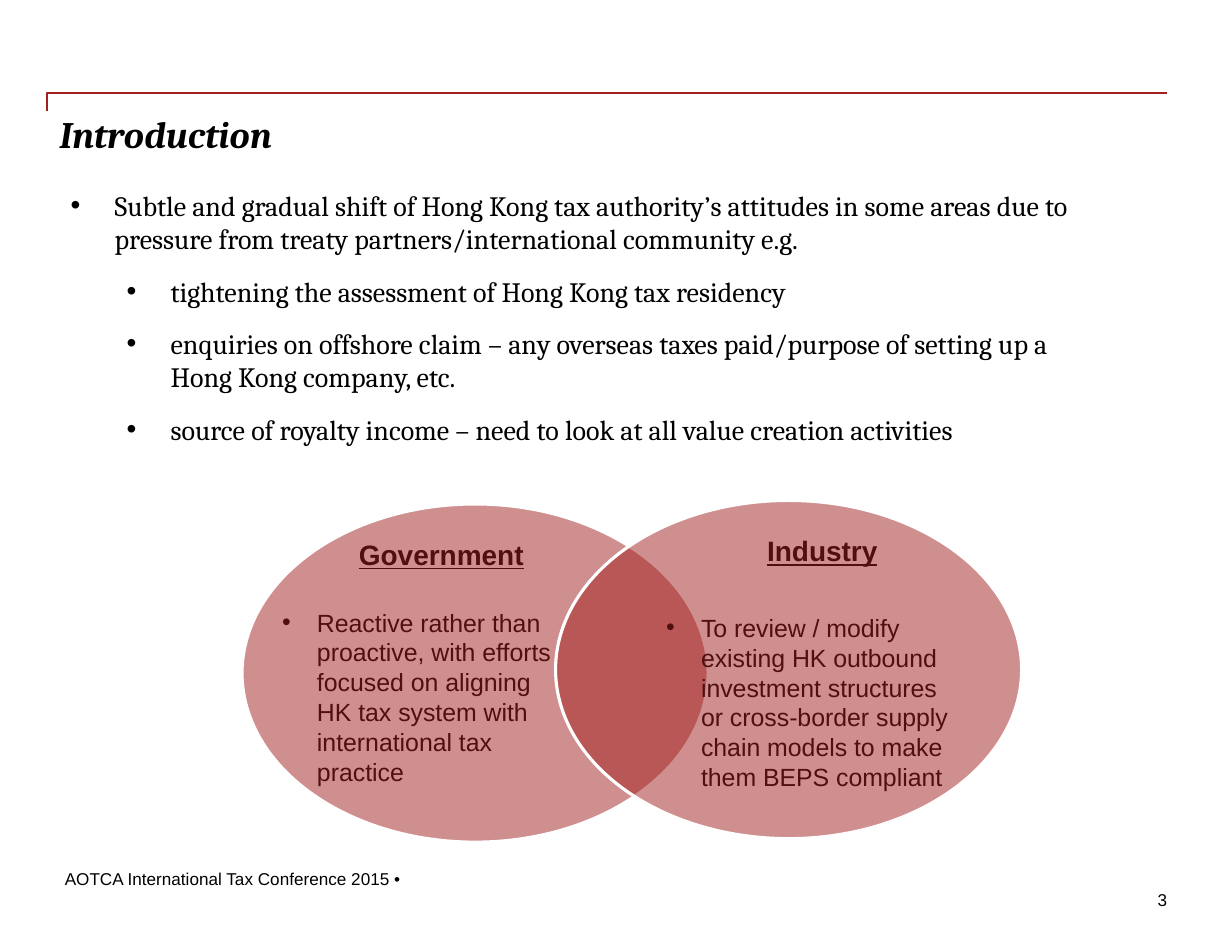
from lxml import etree
from pptx import Presentation
from pptx.dml.color import RGBColor
from pptx.enum.shapes import MSO_CONNECTOR, MSO_SHAPE
from pptx.enum.text import MSO_ANCHOR, MSO_AUTO_SIZE, PP_ALIGN
from pptx.oxml.ns import qn
from pptx.util import Cm, Pt

ELBOW = MSO_CONNECTOR.ELBOW
OVAL = MSO_SHAPE.OVAL
TOP = MSO_ANCHOR.TOP
FIXED = MSO_AUTO_SIZE.NONE
LEFT, MID, RIGHT = PP_ALIGN.LEFT, PP_ALIGN.CENTER, PP_ALIGN.RIGHT

RED = RGBColor(0xA3, 0x20, 0x20)
DARK = RGBColor(0x51, 0x10, 0x10)
BLACK = RGBColor(0, 0, 0)
WHITE = RGBColor(0xFF, 0xFF, 0xFF)

TITLE = {"name": "Cambria", "size": Pt(24), "bold": True, "italic": True}
BODY = {"name": "Cambria", "size": Pt(18)}
HEAD = {"name": "Arial", "size": Pt(18), "bold": True, "underline": True}
NOTE = {"name": "Arial", "size": Pt(16)}
FOOT = {"name": "Arial", "size": Pt(11)}

POINTS = [
    (0, "Subtle and gradual shift of Hong Kong tax authority’s attitudes in some "
        "areas due to pressure from treaty partners/international community e.g."),
    (1, "tightening the assessment of Hong Kong tax residency"),
    (1, "enquiries on offshore claim – any overseas taxes paid/purpose of "
        "setting up a Hong Kong company, etc."),
    (1, "source of royalty income – need to look at all value creation activities"),
]
# Box of the oval, then heading, note and their boxes as offsets from its corner
SIDES = [
    ((5.49, 11.43, 10.57, 7.67),
     "Government", (1.47, 0.76, 6.1, 0.8),
     "Reactive rather than proactive, with efforts focused on aligning HK tax "
     "system with international tax practice", (0.91, 2.34, 6.25, 5.05)),
    ((12.6, 11.35, 10.57, 7.67),
     "Industry", (3, 0.76, 6.1, 0.8),
     "To review / modify existing HK outbound investment structures or "
     "cross-border supply chain models to make them BEPS compliant",
     (2.51, 2.54, 6.6, 5.05)),
]


def place(shape, box):
    for key, val in zip(("left", "top", "width", "height"), box):
        setattr(shape, key, Cm(val))


def set_frame(frame, pad=(0, 0)):
    side, edge = map(Cm, pad)
    form = {"word_wrap": True, "auto_size": FIXED, "vertical_anchor": TOP,
            "margin_left": side, "margin_right": side,
            "margin_top": edge, "margin_bottom": edge}
    for key, val in form.items():
        setattr(frame, key, val)


def write(para, text, font, color=BLACK, align=LEFT, before=0, after=0):
    run = para.add_run()
    run.text = text
    for key, val in font.items():
        setattr(run.font, key, val)
    run.font.color.rgb = color
    form = {"alignment": align, "space_before": Pt(before),
            "space_after": Pt(after)}
    for key, val in form.items():
        setattr(para, key, val)


def add_dot(para, left, hang):
    """Give the paragraph a bullet and a hanging indent."""
    props = para._p.get_or_add_pPr()
    props.set("marL", str(Cm(left)))
    props.set("indent", str(-Cm(hang)))
    etree.SubElement(props, qn("a:buFont")).set("typeface", "Arial")
    etree.SubElement(props, qn("a:buChar")).set("char", "•")


def add_text(slide, box, text, font, color=BLACK, align=LEFT):
    frame = slide.shapes.add_textbox(*map(Cm, box)).text_frame
    set_frame(frame)
    write(frame.paragraphs[0], text, font, color, align)
    return frame.paragraphs[0]


def add_rule(slide, box):
    """Draw the top line with its short drop at the left end."""
    left, top, width, height = box
    rule = slide.shapes.add_connector(
        ELBOW, Cm(left), Cm(top + height), Cm(left + width), Cm(top))
    rule.line.color.rgb = RED
    rule.line.width = Pt(1)
    props = rule._element.spPr
    guide = etree.SubElement(props.find(qn("a:prstGeom")).find(qn("a:avLst")),
                             qn("a:gd"))
    guide.set("name", "adj1")
    guide.set("fmla", "val 0")
    etree.SubElement(props, qn("a:effectLst"))


def add_title(slide, box):
    title = slide.shapes.title
    place(title, box)
    set_frame(title.text_frame)
    write(title.text_frame.paragraphs[0], "Introduction", TITLE)


def add_list(slide, box):
    body = slide.placeholders[1]
    place(body, box)
    frame = body.text_frame
    set_frame(frame, (0.25, 0.13))
    for num, (level, text) in enumerate(POINTS):
        para = frame.add_paragraph() if num else frame.paragraphs[0]
        para.level = level
        write(para, text, BODY, before=0 if level else 6, after=12)
        add_dot(para, 1 + 1.27 * level, 1)


def add_oval(slide, box):
    oval = slide.shapes.add_shape(OVAL, *map(Cm, box))
    oval.shadow.inherit = False
    oval.fill.solid()
    oval.fill.fore_color.rgb = RED
    color = oval._element.spPr.find(qn("a:solidFill"))[0]
    etree.SubElement(color, qn("a:alpha")).set("val", "50000")
    oval.line.color.rgb = WHITE
    oval.line.width = Pt(2)


def add_venn(slide):
    for box, *_ in SIDES:
        add_oval(slide, box)
    for (left, top, *_), head, spot, note, area in SIDES:
        def shift(part):
            return left + part[0], top + part[1], *part[2:]
        add_text(slide, shift(spot), head, HEAD, DARK, MID)
        add_dot(add_text(slide, shift(area), note, NOTE, DARK), 0.79, 0.79)


def add_foot(slide, box):
    left, top, width, height = box
    add_text(slide, (left, top, 12, height),
             "AOTCA International Tax Conference 2015 •", FOOT)
    add_text(slide, (left + width - 1, top + 0.48, 1, height), "3", FOOT,
             align=RIGHT)


def main():
    deck = Presentation()
    deck.slide_width, deck.slide_height = Cm(27.94), Cm(21.59)
    slide = deck.slides.add_slide(deck.slide_layouts[1])
    add_rule(slide, (1.07, 2.11, 25.4, 0.41))
    add_title(slide, (1.35, 2.51, 25, 2.54))
    add_list(slide, (1.35, 4.14, 23.57, 7.57))
    add_venn(slide)
    add_foot(slide, (1.47, 19.69, 25, 0.48))
    deck.save("out.pptx")


if __name__ == "__main__":
    main()
